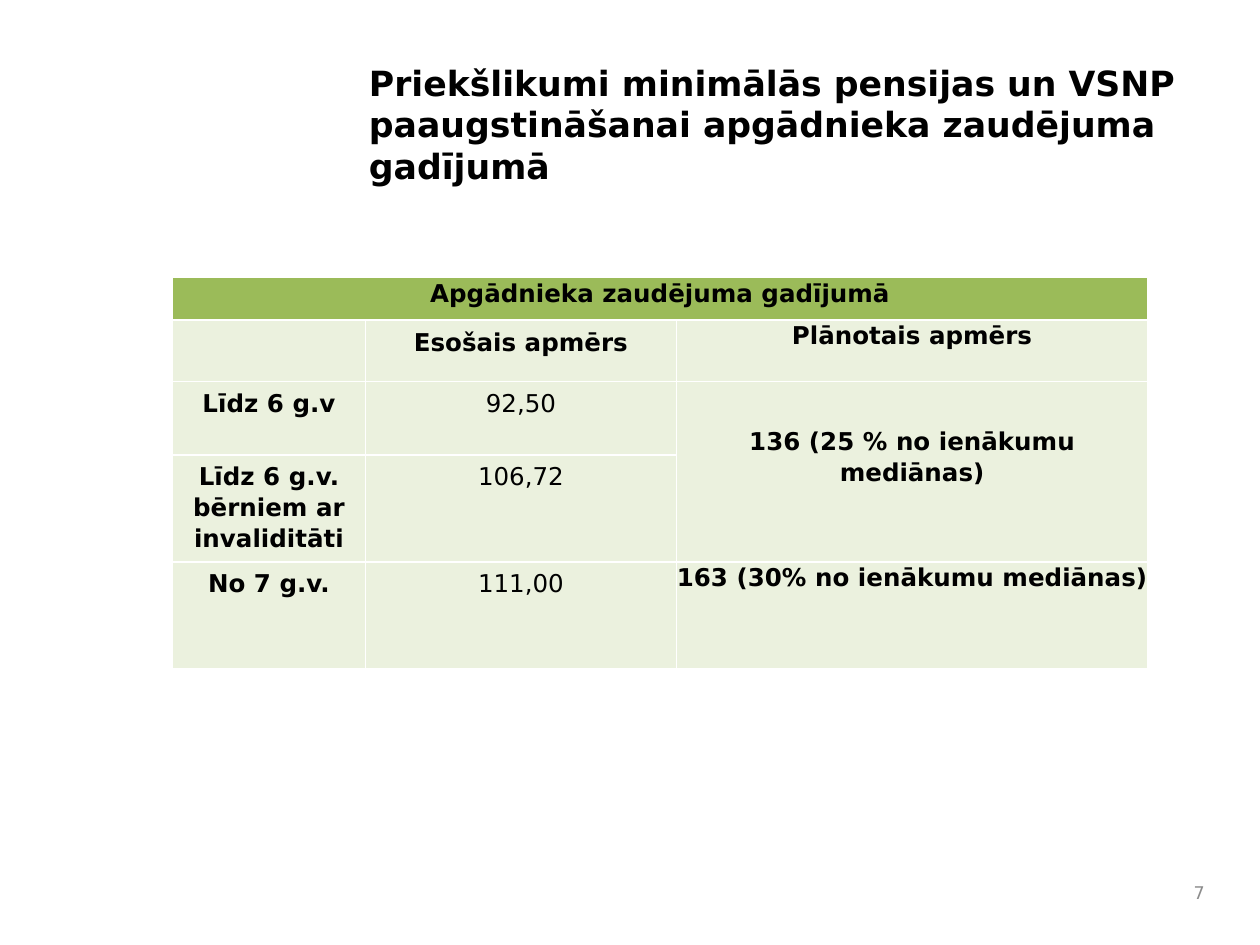
from dataclasses import dataclass

from lxml.etree import SubElement
from pptx import Presentation
from pptx.dml.color import RGBColor
from pptx.enum.text import MSO_ANCHOR as Anchor, PP_ALIGN as Align
from pptx.oxml.ns import qn
from pptx.util import Inches, Pt


@dataclass(frozen=True)
class Theme:
    font: str = "DejaVu Sans"
    ink: str = "000000"
    muted: str = "8C8C8C"
    header: str = "9BBB59"
    body: str = "EBF1DE"
    border: str = "FFFFFF"
    title_size: float = 19.8
    table_size: float = 14
    number_size: float = 10


theme = Theme()


def write(frame, text, size=theme.table_size, color=theme.ink, bold=False,
          align=Align.LEFT, spacing=None, after=None):
    frame.word_wrap = True
    paragraph = frame.paragraphs[0]
    paragraph.alignment = align
    paragraph.line_spacing = spacing
    paragraph.space_after = after
    font = paragraph.font
    if text:
        run = paragraph.add_run()
        run.text = text
        font = run.font
    font.name = theme.font
    font.size = Pt(size)
    font.bold = bold
    font.color.rgb = RGBColor.from_string(color)


def style_cell(cell, fill):
    cell.fill.solid()
    cell.fill.fore_color.rgb = RGBColor.from_string(fill)
    properties = cell._tc.get_or_add_tcPr()
    for position, side in enumerate(("lnL", "lnR", "lnT", "lnB")):
        line = SubElement(properties, qn(f"a:{side}"), w=str(Pt(1)))
        solid = SubElement(line, qn("a:solidFill"))
        SubElement(solid, qn("a:srgbClr"), val=theme.border)
        properties.insert(position, line)


presentation = Presentation()
presentation.slide_width = Inches(10)
presentation.slide_height = Inches(7.5)
slide = presentation.slides.add_slide(presentation.slide_layouts[6])

title = slide.shapes.add_textbox(Inches(2.83), Inches(0.42), Inches(6.67), Inches(1.13))
title.text_frame.vertical_anchor = Anchor.MIDDLE
write(title.text_frame,
      "Priekšlikumi minimālās pensijas un VSNP paaugstināšanai apgādnieka zaudējuma gadījumā",
      size=theme.title_size, bold=True)

column_widths = [1.53, 2.47, 3.74]
row_heights = [0.34, 0.49, 0.58, 0.84, 0.85]
rows = [
    ["Apgādnieka zaudējuma gadījumā", "", ""],
    ["", "Esošais apmērs", "Plānotais apmērs"],
    ["Līdz 6 g.v", "92,50", "136 (25 % no ienākumu mediānas)"],
    ["Līdz 6 g.v. bērniem ar invaliditāti", "106,72", ""],
    ["No 7 g.v.", "111,00", "163 (30% no ienākumu mediānas)"],
]
table = slide.shapes.add_table(
    len(rows), len(column_widths), Inches(1.37), Inches(2.2),
    Inches(sum(column_widths)), Inches(sum(row_heights))).table
for column, width in zip(table.columns, column_widths):
    column.width = Inches(width)
for row, height in zip(table.rows, row_heights):
    row.height = Inches(height)

for row_index, texts in enumerate(rows):
    for column_index, text in enumerate(texts):
        cell = table.cell(row_index, column_index)
        padded = row_index > 0 and column_index < 2
        cell.margin_left = cell.margin_right = Inches(0.1 if padded else 0)
        cell.margin_top = cell.margin_bottom = Inches(0.05 if padded else 0)
        style_cell(cell, theme.header if row_index == 0 else theme.body)
        write(cell.text_frame, text, bold=row_index < 2 or column_index != 1,
              align=Align.CENTER, spacing=1.07, after=Pt(8))

table.cell(0, 0).merge(table.cell(0, 2))
table.cell(2, 2).merge(table.cell(3, 2))
table.cell(2, 2).margin_top = Inches(0.35)

number = slide.shapes.add_textbox(Inches(9.33), Inches(6.92), Inches(0.33), Inches(0.33))
number.text_frame.vertical_anchor = Anchor.MIDDLE
write(number.text_frame, "7", size=theme.number_size, color=theme.muted, align=Align.RIGHT)

presentation.save("out.pptx")
